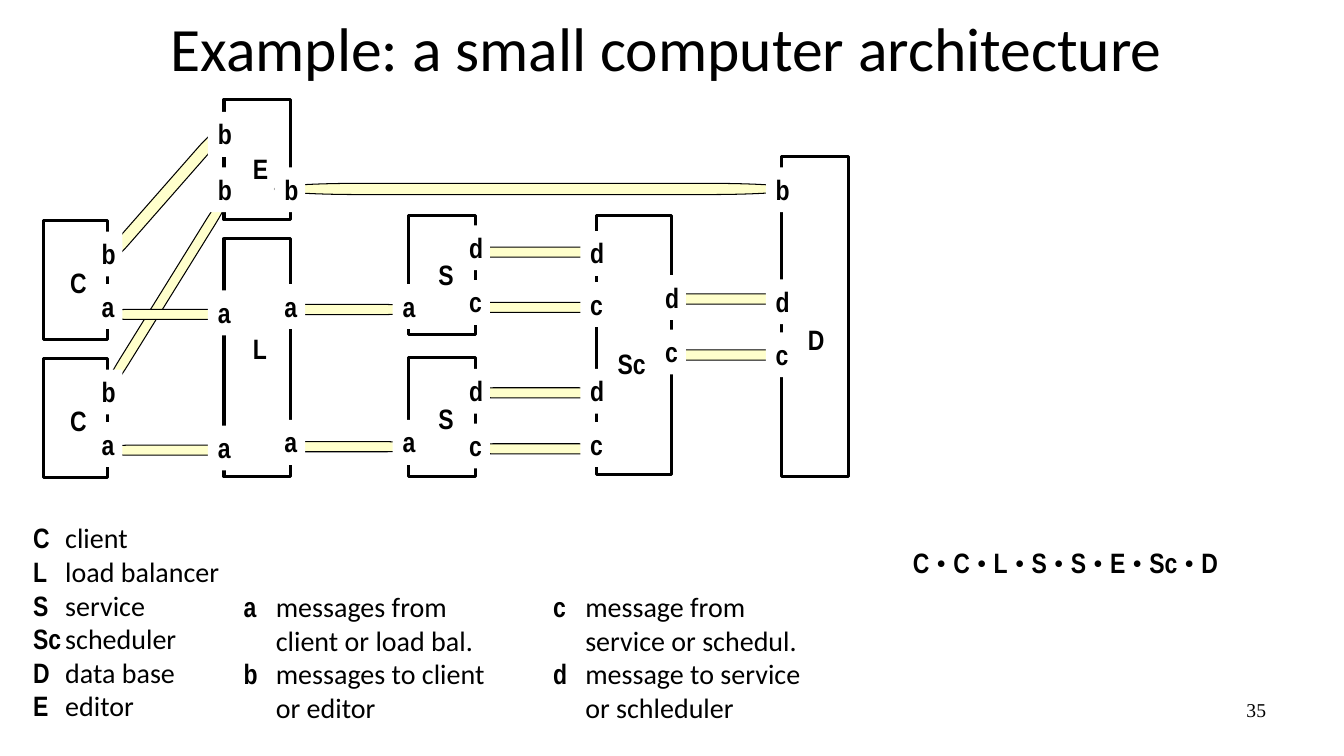
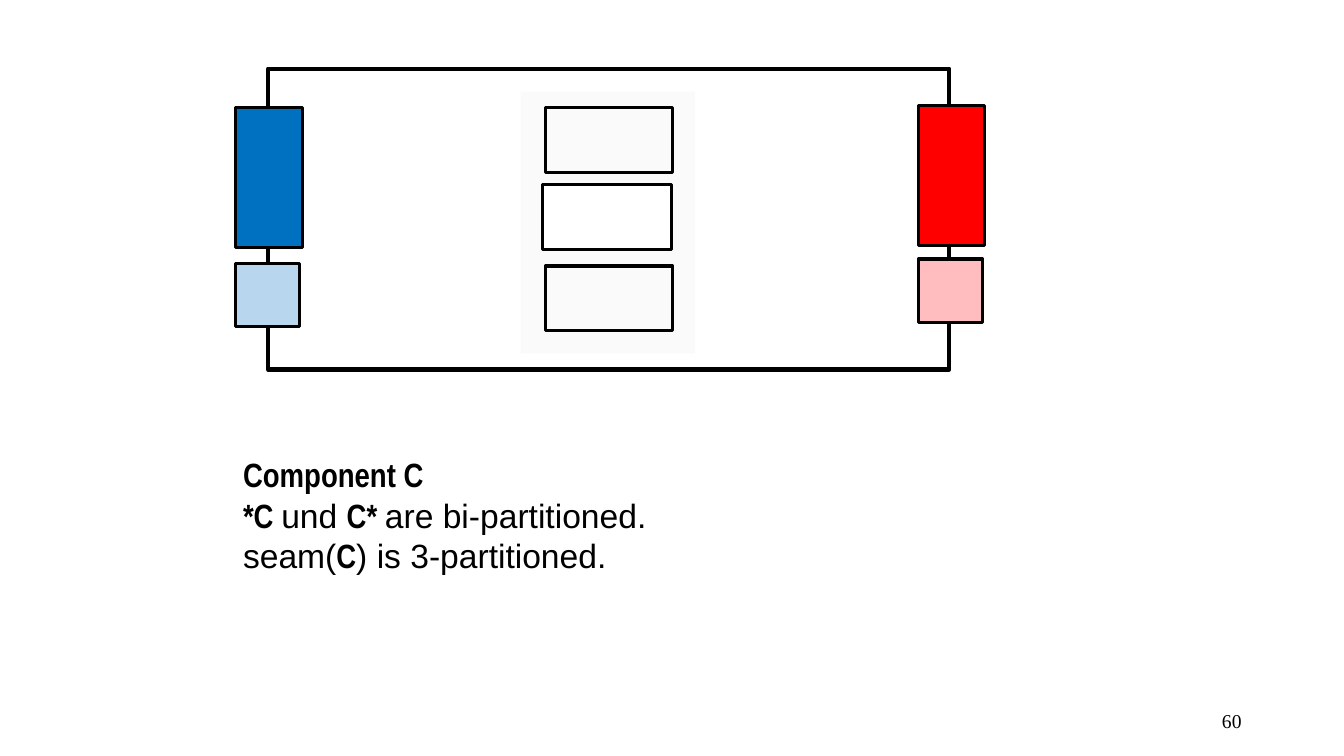
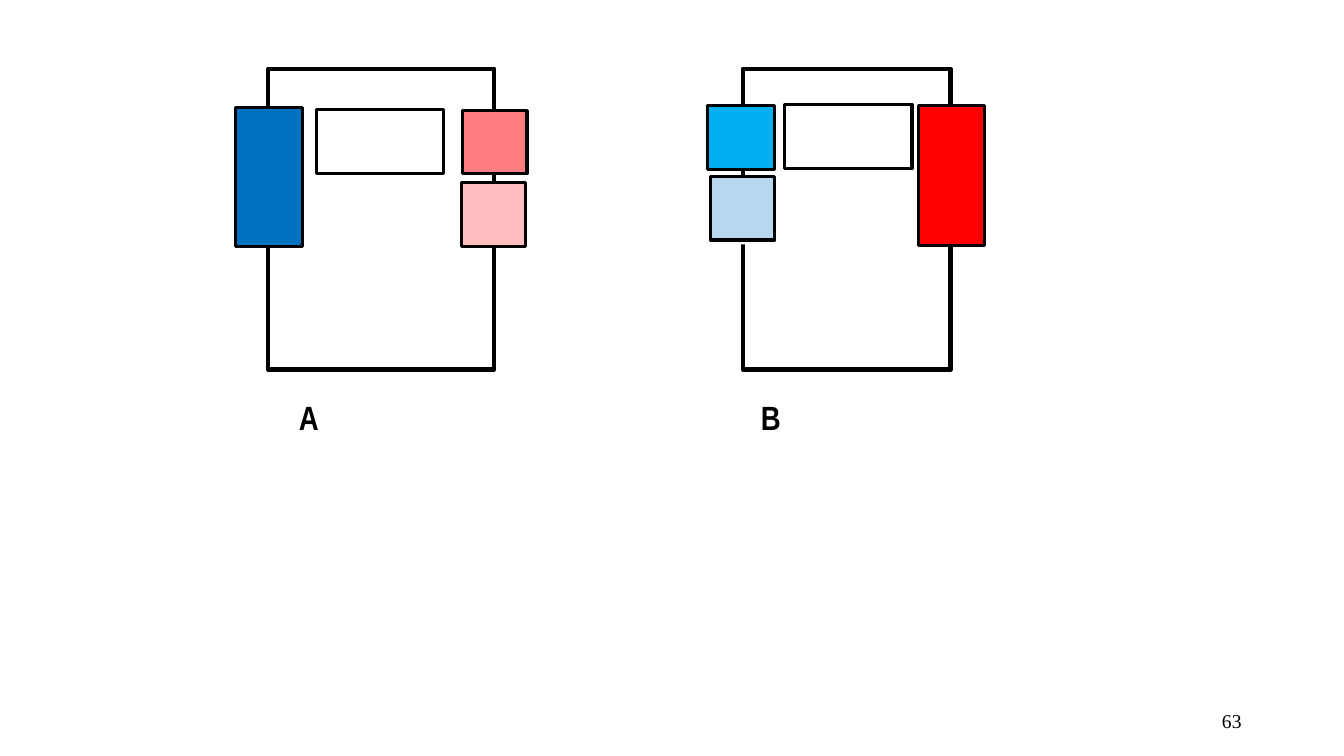
from pptx import Presentation
from pptx.dml.color import RGBColor
from pptx.enum.shapes import MSO_SHAPE
from pptx.enum.text import MSO_ANCHOR, MSO_AUTO_SIZE, PP_ALIGN
from pptx.util import Pt

RECT, PIPE = MSO_SHAPE.RECTANGLE, MSO_SHAPE.FLOWCHART_TERMINATOR
TOP, MIDDLE = MSO_ANCHOR.TOP, MSO_ANCHOR.MIDDLE
LEFT, RIGHT = PP_ALIGN.LEFT, PP_ALIGN.RIGHT
NO_FIT = MSO_AUTO_SIZE.NONE
TITLE_ONLY, BLANK = 5, 6

BLACK, WHITE, CREAM, PALE_GREY = "000000", "FFFFFF", "FFFFCC", "FAFAFA"
BLUE, SKY, PALE_BLUE = "0070C0", "00B0F0", "B8D7EE"
RED, SALMON, PALE_RED = "FF0000", "FF7C80", "FFBDBF"

# Run styles: font name, bold
NAME = ("Arial Narrow", True)
PLAIN = ("Calibri", False)
SANS = ("Arial", False)
SERIF = ("Times New Roman", False)

# Slide 1: frame box, name with its place, ports on the left and right edge
COMPONENTS = [
    ((160, 71, 47.5, 86), ("E", 173.5, 105), [("b", 80), ("b", 119.5)], [("b", 119.5)]),
    ((31, 157.5, 46, 85), ("C", 43, 186), [], [("b", 165.5), ("a", 203)]),
    ((31, 256, 46, 85), ("C", 43, 284.5), [], [("b", 264), ("a", 301.5)]),
    ((160, 170.5, 47.5, 170), ("L", 173.5, 233), [("a", 207.5), ("a", 304)],
     [("a", 203), ("a", 300)]),
    ((292, 154, 47.5, 85), ("S", 306, 180.5), [("a", 203)], [("d", 161), ("c", 200)]),
    ((292, 255.5, 47.5, 85), ("S", 306, 283), [("a", 300)], [("d", 263.5), ("c", 302.5)]),
    ((426, 154, 53.5, 185), ("Sc", 434, 244),
     [("d", 165), ("c", 201.5), ("d", 263.5), ("c", 301.5)], [("d", 196.5), ("c", 235.5)]),
    ((558.5, 112, 47.5, 228.5), ("D", 570, 227),
     [("b", 119.5), ("d", 199.5), ("c", 237.5)], []),
]
PORT_W, LABEL_H, PORT_INSET = 22, 32, 11.5
SHORT_PIPES = {  # left edge: tops
    77: [221, 318], 200.5: [217.5, 315.5],
    337.5: [176.5, 216, 277, 317], 474: [210, 250],
}
PIPE_W, PIPE_H = 91, 7.2
LONG_PIPES = [  # box, rotation
    ((196, 131, 371, 8), 0),
    ((52.5, 136, 128, 8.5), 311.3),
    ((33, 205, 173, 7.2), 301.8),
]
COMPOSITION = ["C", "C", "L", "S", "S", "E", "Sc", "D"]
LEGENDS = [  # box, (symbol, lines of meaning)
    ((16.5, 368.5, 184, 153), [
        ("C", ["client"]), ("L", ["load balancer"]), ("S", ["service"]),
        ("Sc", ["scheduler"]), ("D", ["data base"]), ("E", ["editor"])]),
    ((167, 417.5, 204.5, 104), [
        ("a", ["messages from", "client or load bal."]),
        ("b", ["messages to client", "or editor"])]),
    ((388, 417.5, 204.5, 104), [
        ("c", ["message from", "service or schedul."]),
        ("d", ["message to service", "or schleduler"])]),
]
LEGEND_INDENT = 23

# Slides 2 and 3: box, fill, line width
FRAME_LINE, BLOCK_LINE = 3, 2.25
COMPONENT_BOXES = [
    ((372, 65.5, 124.5, 187), PALE_GREY, 0),
    ((191.5, 49, 486.5, 215), None, FRAME_LINE),
    ((168.5, 77, 47.5, 100), BLUE, BLOCK_LINE),
    ((656, 75.5, 47.5, 100), RED, BLOCK_LINE),
    ((389.5, 77, 91, 46), None, BLOCK_LINE),
    ((387.5, 132, 92, 46), WHITE, BLOCK_LINE),
    ((389.5, 190, 91, 46), None, BLOCK_LINE),
    ((656, 185, 46, 45.5), PALE_RED, BLOCK_LINE),
    ((168, 188, 46, 45.5), PALE_BLUE, BLOCK_LINE),
]
COMPONENT_TEXT = [
    [("Component C", NAME)],
    [("*C ", NAME), ("und ", SANS), ("C* ", NAME), ("are bi-partitioned.", SANS)],
    [("seam(", SANS), ("C", NAME), (") is 3-partitioned.", SANS)],
]
PAIR_BOXES = [
    ((530.5, 49, 148.5, 215), None, FRAME_LINE),
    ((191.5, 49, 161.5, 215), None, FRAME_LINE),
    ((168.5, 77, 47.5, 99), BLUE, BLOCK_LINE),
    ((656, 75.5, 47.5, 100), RED, BLOCK_LINE),
    ((330.5, 79, 46, 45), SALMON, BLOCK_LINE),
    ((560.5, 74.5, 91, 46), None, BLOCK_LINE),
    ((505.5, 75.5, 47.5, 45.5), SKY, BLOCK_LINE),
    ((226, 78, 91, 46), None, BLOCK_LINE),
    ((494, 129, 46, 45.5), WHITE, 0),
    ((507.5, 126, 46, 45.5), PALE_BLUE, BLOCK_LINE),
    ((329.5, 130.5, 46, 45.5), PALE_RED, BLOCK_LINE),
]
PAIR_NAMES = [("A", 206.5), ("B", 536.5)]


def rgb(color):
    return RGBColor.from_string(color)


def write(s, paragraphs, size, align=LEFT, anchor=TOP, indent=0):
    """Fill a shape with paragraphs of (text, style) runs; "\n" breaks a line."""
    tf = s.text_frame
    tf.word_wrap = True
    tf.auto_size = NO_FIT
    tf.vertical_anchor = anchor
    for i, runs in enumerate(paragraphs):
        p = tf.add_paragraph() if i else tf.paragraphs[0]
        p.alignment = align
        if indent:
            pPr = p._p.get_or_add_pPr()
            pPr.set("marL", str(Pt(indent)))
            pPr.set("indent", str(-Pt(indent)))
        for text, (font, bold) in runs:
            if text == "\n":
                p.add_line_break()
                continue
            r = p.add_run()
            r.text = text
            r.font.name, r.font.bold, r.font.size = font, bold, Pt(size)
            r.font.color.rgb = rgb(BLACK)


def add_text(slide, box, paragraphs, size, **layout):
    s = slide.shapes.add_textbox(*map(Pt, box))
    write(s, paragraphs, size, **layout)


def add_box(slide, box, fill=None, line=0, kind=RECT):
    s = slide.shapes.add_shape(kind, *map(Pt, box))
    s.shadow.inherit = False
    if fill:
        s.fill.solid()
        s.fill.fore_color.rgb = rgb(fill)
    else:
        s.fill.background()
    if line:
        s.line.color.rgb = rgb(BLACK)
        s.line.width = Pt(line)
    else:
        s.line.fill.background()
    return s


def add_label(slide, text, x, y, w=PORT_W):
    write(add_box(slide, (x, y, w, LABEL_H), WHITE), [[(text, NAME)]], 20)


def add_slide(prs, layout, number, number_at):
    slide = prs.slides.add_slide(prs.slide_layouts[layout])
    add_text(slide, (*number_at, 216, 29), [[(number, SERIF)]], 14, align=RIGHT, anchor=MIDDLE)
    return slide


def legend_runs(symbol, lines):
    runs = [(symbol + "\t", NAME), (lines[0], PLAIN)]
    for line in lines[1:]:
        runs += [("\n", PLAIN), (line, PLAIN)]
    return runs


def build_architecture(prs):
    slide = add_slide(prs, TITLE_ONLY, "35", (695.5, 492.5))
    title = slide.shapes.title
    title.left, title.top, title.width, title.height = map(Pt, (114.5, 3.5, 734.5, 60.5))
    write(title, [[("Example: a small computer architecture", PLAIN)]], 44)

    short = [((x, y, PIPE_W, PIPE_H), 0) for x, tops in SHORT_PIPES.items() for y in tops]
    for box, rotation in LONG_PIPES + short:
        add_box(slide, box, CREAM, 0.75, PIPE).rotation = rotation
    for frame, *_ in COMPONENTS:
        add_box(slide, frame, line=BLOCK_LINE)
    for (x, _, w, _), (name, name_x, name_y), left_ports, right_ports in COMPONENTS:
        add_label(slide, name, name_x, name_y, PORT_W if len(name) == 1 else 39.5)
        for edge, ports in ((x, left_ports), (x + w, right_ports)):
            for port, y in ports:
                add_label(slide, port, edge - PORT_INSET, y)

    for box, entries in LEGENDS:
        add_text(slide, box, [legend_runs(*e) for e in entries], 20, indent=LEGEND_INDENT)
    runs = [(COMPOSITION[0], NAME)]
    for name in COMPOSITION[1:]:
        runs += [(" • ", SERIF), (name, NAME)]
    add_text(slide, (645, 386, 283, 31.5), [runs], 20)


def build_blocks(prs, number, boxes):
    slide = add_slide(prs, BLANK, number, (678, 500.5))
    for box, fill, line in boxes:
        add_box(slide, box, fill, line)
    return slide


def main():
    prs = Presentation()
    prs.slide_width, prs.slide_height = Pt(960), Pt(540)
    build_architecture(prs)
    slide = build_blocks(prs, "60", COMPONENT_BOXES)
    add_text(slide, (166.5, 321, 370, 94.5), COMPONENT_TEXT, 24)
    slide = build_blocks(prs, "63", PAIR_BOXES)
    for name, x in PAIR_NAMES:
        add_text(slide, (x, 280, 42, 36.5), [[(name, NAME)]], 24)
    prs.save("out.pptx")


if __name__ == "__main__":
    main()
